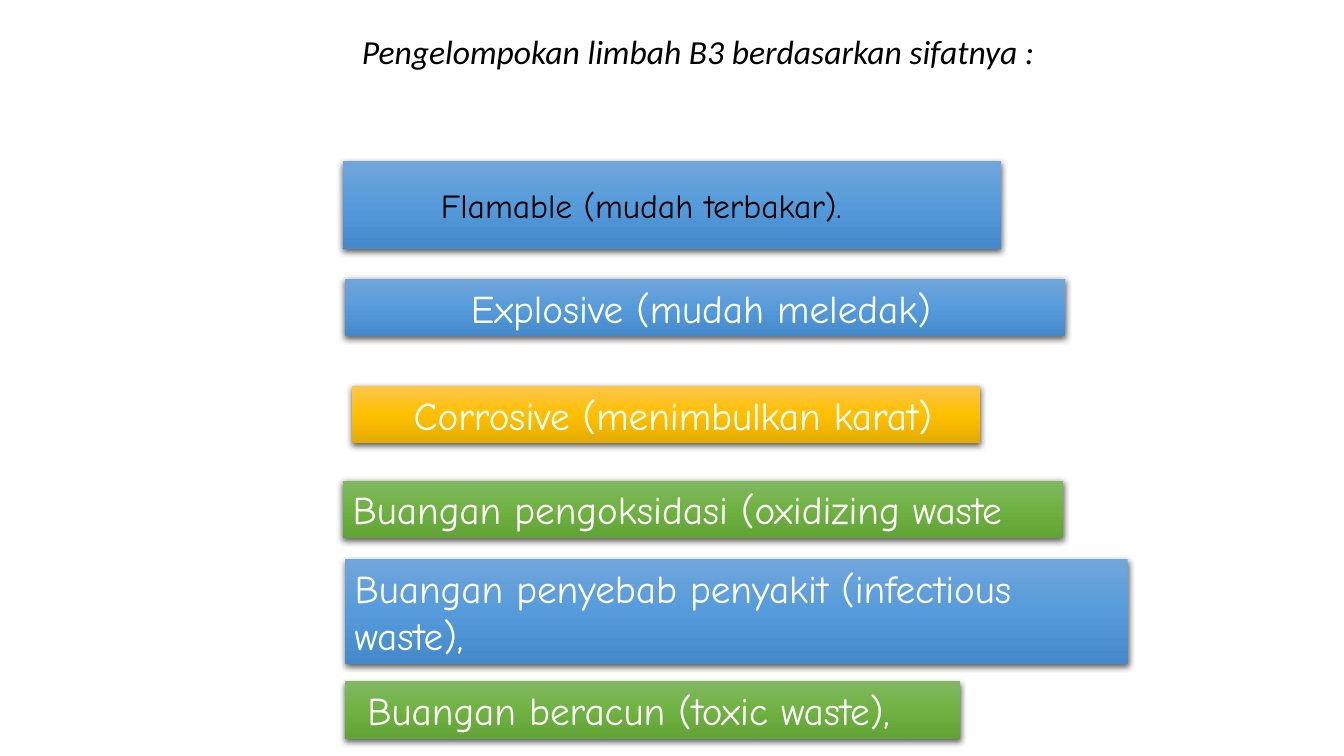
from dataclasses import dataclass
from copy import deepcopy

from lxml import etree
from pptx import Presentation
from pptx.dml.color import RGBColor
from pptx.enum.shapes import MSO_SHAPE
from pptx.enum.text import MSO_ANCHOR, MSO_AUTO_SIZE, PP_ALIGN
from pptx.oxml.ns import qn
from pptx.util import Pt

RECTANGLE = MSO_SHAPE.RECTANGLE
TOP, MIDDLE = MSO_ANCHOR.TOP, MSO_ANCHOR.MIDDLE
LEFT = PP_ALIGN.LEFT
NO_AUTOFIT = MSO_AUTO_SIZE.NONE
TITLE_ONLY = 5


@dataclass(frozen=True)
class Theme:
    title_font: str = "Calibri"
    body_font: str = "Comic Neue"
    small: int = 24
    large: int = 28
    black: str = "000000"
    white: str = "FFFFFF"
    # Gradients from top to bottom
    blue: tuple = ("71A6DB", "559BDB", "448ACA")
    gold: tuple = ("FFC64B", "FFC000", "E3AB00")
    green: tuple = ("81B861", "6FB242", "62A336")
    inset: float = 7.2


THEME = Theme()

TITLE = "Pengelompokan limbah B3 berdasarkan sifatnya :"
TITLE_BOX = (251.3, 21.6, 793.4, 33.8)

# Box (left, top, width, height), gradient, text indent, wording
WASTE_TYPES = [
    ((244.8, 115.2, 470.2, 62.6), THEME.blue, 63, "Flamable (mudah terbakar)."),
    ((246.2, 199.4, 514.8, 41), THEME.blue, 83, "Explosive (mudah meledak)"),
    ((251.3, 275.8, 448.6, 41), THEME.gold, 37, "Corrosive (menimbulkan karat)"),
    ((244.8, 343.4, 514.8, 41), THEME.green, 0, "Buangan pengoksidasi (oxidizing waste"),
    ((246.2, 399.6, 559.4, 74.9), THEME.blue, 0, "Buangan penyebab penyakit (infectious waste),"),
    ((246.2, 486.7, 439.9, 41), THEME.green, 9, "Buangan beracun (toxic waste),"),
]


def set_font(paragraph, name, size, color, italic=False):
    font = paragraph.font
    font.name, font.size, font.italic = name, Pt(size), italic
    font.color.rgb = RGBColor.from_string(color)


def fill_gradient(shape, colors):
    shape.fill.gradient()
    shape.fill.gradient_angle = 270
    stop_list = next(shape._element.iter(qn("a:gsLst")))
    stop_list.insert(1, deepcopy(stop_list[0]))
    for index, (stop, color) in enumerate(zip(shape.fill.gradient_stops, colors)):
        stop.position = index / 2
        stop.color.rgb = RGBColor.from_string(color)


def add_shadow(shape, color):
    shape.shadow.inherit = False
    effects = shape._element.spPr.find(qn("a:effectLst"))
    shadow = etree.SubElement(
        effects, qn("a:outerShdw"), blurRad=str(Pt(4.5)), dist=str(Pt(1.5)),
        dir="5400000", algn="ctr", rotWithShape="0")
    tint = etree.SubElement(shadow, qn("a:srgbClr"), val=color)
    etree.SubElement(tint, qn("a:alpha"), val="63000")


def place_title(page, box):
    title = page.shapes.title
    title.left, title.top, title.width, title.height = map(Pt, box)
    frame = title.text_frame
    frame.text = TITLE
    frame.auto_size = NO_AUTOFIT
    frame.vertical_anchor = MIDDLE
    para = frame.paragraphs[0]
    para.alignment, para.line_spacing = LEFT, 0.9
    set_font(para, THEME.title_font, THEME.small, THEME.black, italic=True)


def add_waste_bar(page, box, colors, indent, wording, size, color, anchor):
    bar = page.shapes.add_shape(RECTANGLE, *map(Pt, box))
    fill_gradient(bar, colors)
    bar.line.fill.background()
    add_shadow(bar, THEME.black)
    frame = bar.text_frame
    frame.text = wording
    frame.word_wrap = True
    frame.vertical_anchor = anchor
    frame.margin_left = Pt(THEME.inset + indent)
    para = frame.paragraphs[0]
    para.alignment = LEFT
    set_font(para, THEME.body_font, size, color)


def build_waste_page(deck):
    page = deck.slides.add_slide(deck.slide_layouts[TITLE_ONLY])
    place_title(page, TITLE_BOX)
    # The first bar has smaller, dark, centred text
    for index, waste in enumerate(WASTE_TYPES):
        style = ((THEME.large, THEME.white, TOP) if index
                 else (THEME.small, THEME.black, MIDDLE))
        add_waste_bar(page, *waste, *style)


def main():
    deck = Presentation()
    deck.slide_width, deck.slide_height = Pt(960), Pt(540)
    build_waste_page(deck)
    deck.save("out.pptx")


if __name__ == "__main__":
    main()
